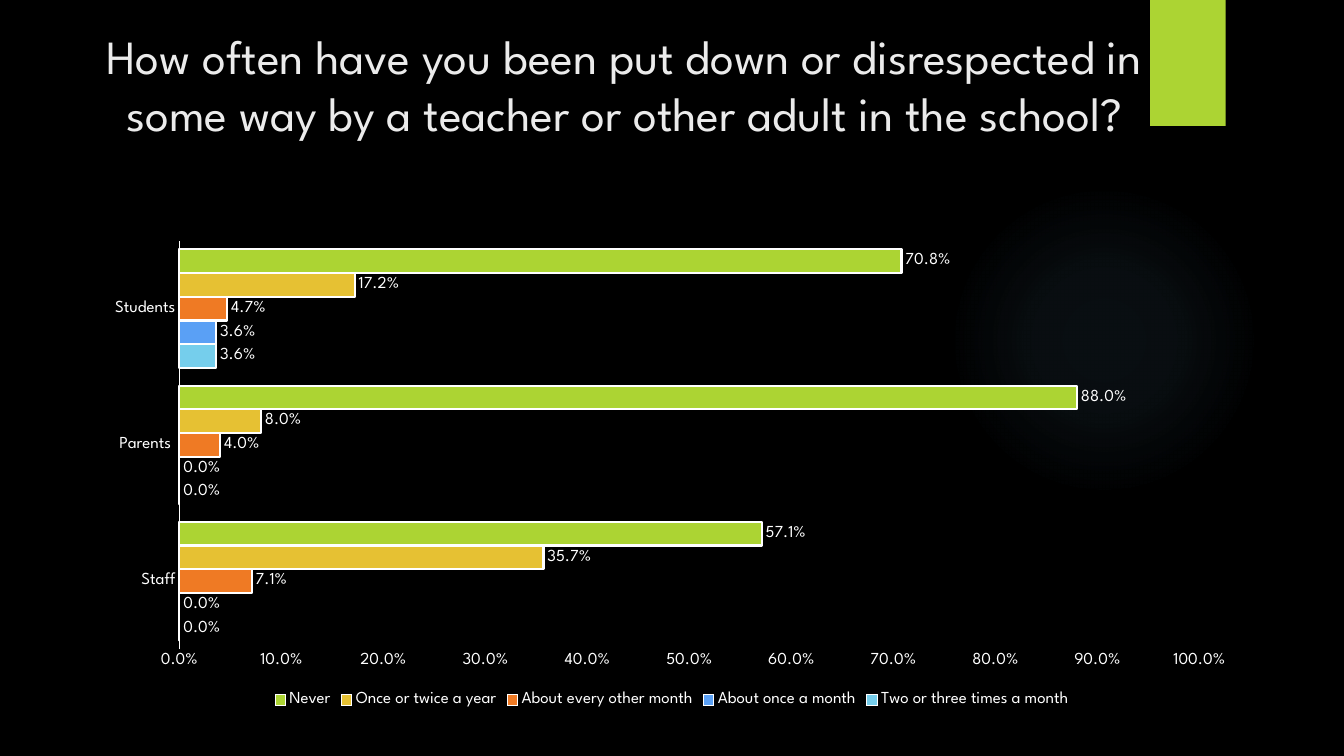
from lxml import etree
from pptx import Presentation
from pptx import util as u
from pptx.chart import data
from pptx.dml import color
from pptx.enum import chart as charts, shapes, text
from pptx.oxml import ns

Pt = u.Pt
FONT = "League Spartan"
COLORS = {"background": "000000", "white": "FFFFFF", "title": "EBEBEB",
          "glow": "7AC4F0", "never": "ACD433", "yearly": "E6C133",
          "bimonthly": "EF7A24", "monthly": "5AA0F5", "often": "75CEEC"}
TITLE = ("How often have you been put down or disrespected in some way "
         "by a teacher or other adult in the school?")
GROUPS = ["Staff", "Parents ", "Students"]
ANSWERS = [
    ("Two or three times a month", "often", (0, 0, 0.036)),
    ("About once a month", "monthly", (0, 0, 0.036)),
    ("About every other month", "bimonthly", (0.071, 0.04, 0.047)),
    ("Once or twice a year", "yearly", (0.357, 0.08, 0.172)),
    ("Never", "never", (0.571, 0.88, 0.708)),
]
PERCENT = "0.0%"


def rgb(name):
    return color.RGBColor.from_string(COLORS[name])


def style_font(font, size, name="white"):
    font.name = FONT
    font.size = Pt(size)
    font.color.rgb = rgb(name)


def add_plain_shape(slide, kind, box):
    """Add a preset shape without outline or shadow."""
    shape = slide.shapes.add_shape(kind, *map(Pt, box))
    shape.shadow.inherit = False
    shape.line.fill.background()
    return shape


def add_glow(slide, box):
    """Add a faint disc that fades out radially."""
    glow = add_plain_shape(slide, shapes.MSO_SHAPE.OVAL, box)
    stops = "".join(
        f'<a:gs pos="{position}000"><a:srgbClr val="{COLORS["glow"]}">'
        f'<a:alpha val="{alpha}000"/></a:srgbClr></a:gs>'
        for position, alpha in ((0, 7), (36, 6), (69, 0)))
    gradient = etree.fromstring(
        f'<a:gradFill {ns.nsdecls("a")}><a:gsLst>{stops}</a:gsLst><a:path path="circle">'
        '<a:fillToRect l="50000" t="50000" r="50000" b="50000"/></a:path></a:gradFill>')
    glow._element.spPr.find(ns.qn("a:prstGeom")).addnext(gradient)


def add_tab(slide, box):
    tab = add_plain_shape(slide, shapes.MSO_SHAPE.RECTANGLE, box)
    tab.fill.solid()
    tab.fill.fore_color.rgb = rgb("never")


def add_title(slide, box):
    frame = slide.shapes.add_textbox(*map(Pt, box)).text_frame
    frame.word_wrap = True
    frame.vertical_anchor = text.MSO_ANCHOR.TOP
    paragraph = frame.paragraphs[0]
    paragraph.alignment = text.PP_ALIGN.CENTER
    run = paragraph.add_run()
    run.text = TITLE
    style_font(run.font, 34, "title")


def set_plot_layout(chart, x, y, w, h):
    """Fix the inner plot area, as fractions of the chart."""
    area = chart._chartSpace.chart.plotArea
    for old in area.findall(ns.qn("c:layout")):
        area.remove(old)
    layout = etree.Element(ns.qn("c:layout"))
    manual = etree.SubElement(layout, ns.qn("c:manualLayout"))
    for tag, value in (("layoutTarget", "inner"), ("xMode", "edge"), ("yMode", "edge"),
                       ("x", x), ("y", y), ("w", w), ("h", h)):
        etree.SubElement(manual, ns.qn(f"c:{tag}")).set("val", str(value))
    area.insert(0, layout)


def style_axes(chart):
    for axis in (chart.category_axis, chart.value_axis):
        axis.major_tick_mark = axis.minor_tick_mark = charts.XL_TICK_MARK.NONE
        axis.has_major_gridlines = False
        style_font(axis.tick_labels.font, 12)
    category_line = chart.category_axis.format.line
    category_line.color.rgb = rgb("white")
    category_line.width = Pt(0.75)
    values = chart.value_axis
    values.format.line.fill.background()
    values.minimum_scale, values.maximum_scale, values.major_unit = 0, 1, 0.1
    values.tick_labels.number_format = PERCENT
    values.tick_labels.number_format_is_linked = False


def style_series(series, fill):
    series.format.fill.solid()
    series.format.fill.fore_color.rgb = rgb(fill)
    series.format.line.color.rgb = rgb("white")
    series.format.line.width = Pt(1.5)
    labels = series.data_labels
    labels.show_value = True
    labels.number_format = PERCENT
    labels.number_format_is_linked = False
    labels.position = charts.XL_LABEL_POSITION.OUTSIDE_END
    style_font(labels.font, 12)


def add_answer_chart(slide, box):
    chart_data = data.CategoryChartData(number_format=PERCENT)
    chart_data.categories = GROUPS
    for name, _, values in ANSWERS:
        chart_data.add_series(name, values)
    chart = slide.shapes.add_chart(
        charts.XL_CHART_TYPE.BAR_CLUSTERED, *map(Pt, box), chart_data).chart
    chart.has_title = False
    style_font(chart.font, 10)
    set_plot_layout(chart, 0.075, 0.02, 0.88, 0.85)
    style_axes(chart)
    plot = chart.plots[0]
    plot.gap_width = 75
    plot.vary_by_categories = False
    for series, (_, fill, _) in zip(plot.series, ANSWERS):
        style_series(series, fill)
    chart.has_legend = True
    chart.legend.position = charts.XL_LEGEND_POSITION.BOTTOM
    chart.legend.include_in_layout = False
    style_font(chart.legend.font, 12)


def main():
    presentation = Presentation()
    presentation.slide_width, presentation.slide_height = Pt(960), Pt(540)
    slide = presentation.slides.add_slide(presentation.slide_layouts[6])
    slide.background.fill.solid()
    slide.background.fill.fore_color.rgb = rgb("background")
    add_glow(slide, (677.5, 131.75, 222, 222))
    add_tab(slide, (821.5, 0, 54, 90))
    add_title(slide, (66, 16, 760, 117))
    add_answer_chart(slide, (66, 165, 828, 343.5))
    presentation.save("out.pptx")


if __name__ == "__main__":
    main()
